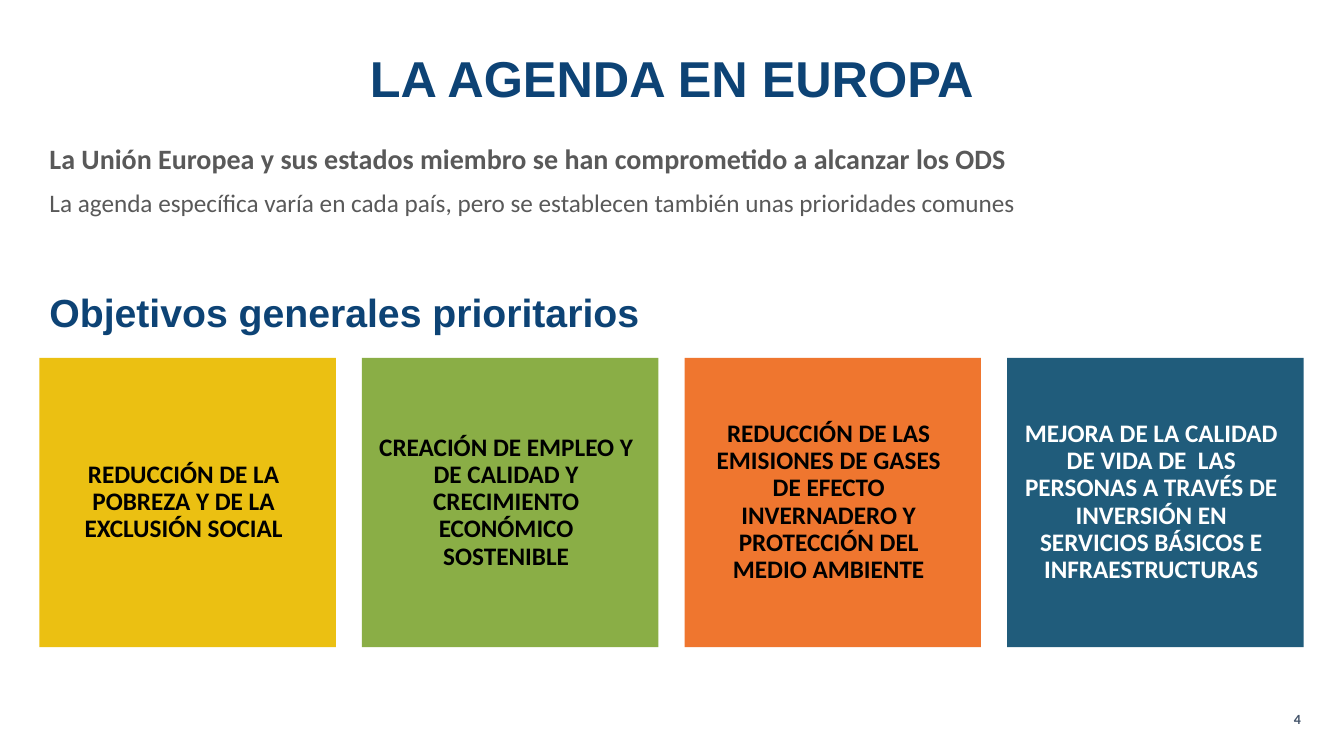
from lxml.etree import SubElement as Sub
from pptx import Presentation
from pptx.dml.color import RGBColor as Rgb
from pptx.enum.shapes import MSO_SHAPE as Kind
from pptx.enum.text import MSO_ANCHOR as Anchor, MSO_AUTO_SIZE as Fit, PP_ALIGN as Align
from pptx.oxml.ns import qn
from pptx.util import Inches, Pt

NAVY, GREY, SLATE = "0D4375", "595959", "44546A"
BLACK, WHITE = "000000", "FFFFFF"
LEFT, STEP, SIDE = 2.93, 24, 22.06
CARDS = [
    ("REDUCCIÓN DE LA POBREZA Y DE LA EXCLUSIÓN SOCIAL", "EBC012", BLACK),
    ("CREACIÓN DE EMPLEO Y DE CALIDAD Y CRECIMIENTO ECONÓMICO SOSTENIBLE", "8AAE46", BLACK),
    ("REDUCCIÓN DE LAS EMISIONES DE GASES DE EFECTO INVERNADERO Y PROTECCIÓN DEL MEDIO AMBIENTE",
     "EF762F", BLACK),
    ("MEJORA DE LA CALIDAD DE VIDA DE  LAS PERSONAS A TRAVÉS DE INVERSIÓN EN SERVICIOS BÁSICOS"
     " E INFRAESTRUCTURAS", "205C7B", WHITE),
]


def paint(code):
    """Turn a hex string into a colour."""
    return Rgb.from_string(code)


def write(frame, text, size=18, face="Calibri", color=GREY, bold=True,
          align=Align.LEFT, anchor=Anchor.TOP, before=10, lines=0.9):
    """Fill a text frame with one formatted paragraph without a bullet."""
    frame.word_wrap, frame.auto_size = True, Fit.NONE
    frame.vertical_anchor = anchor
    para = frame.paragraphs[0]
    para.alignment, para.line_spacing, para.space_before = align, lines, Pt(before)
    props = para._p.get_or_add_pPr()
    props.set("marL", "0")
    props.set("indent", "0")
    Sub(props, qn("a:buNone"))
    run = para.add_run()
    run.text = text
    font = run.font
    font.size, font.name, font.bold = Pt(size), face, bold
    font.color.rgb = paint(color)


class Board:
    """Hold the deck, its current slide and its percent grid."""

    def __init__(self):
        """Open a wide deck with a title and several text places."""
        self.deck = Presentation()
        self.deck.slide_width, self.deck.slide_height = Inches(13.33), Inches(7.5)
        self.slide = self.deck.slides.add_slide(self.deck.slide_layouts[4])

    def area(self, x, y, w, h):
        """Turn percent shares of the slide into lengths."""
        wide, high = self.deck.slide_width, self.deck.slide_height
        return [int(part * full / 100) for part, full in zip((x, y, w, h), (wide, high) * 2)]

    def place(self, key, box, text, **style):
        """Move a template placeholder and fill it."""
        item = self.slide.placeholders[key]
        item.left, item.top, item.width, item.height = self.area(*box)
        write(item.text_frame, text, **style)

    def card(self, box, text, fill, color):
        """Add a filled card with centred text."""
        item = self.slide.shapes.add_shape(Kind.RECTANGLE, *self.area(*box))
        item.shadow.inherit = False
        item.fill.solid()
        item.fill.fore_color.rgb = paint(fill)
        item.line.fill.background()
        frame = item.text_frame
        frame.margin_left = Inches(0.16)
        frame.margin_top = frame.margin_right = frame.margin_bottom = Inches(0.24)
        write(frame, text, color=color, align=Align.CENTER, anchor=Anchor.MIDDLE)

    def label(self, box, text, **style):
        """Add a plain text box."""
        item = self.slide.shapes.add_textbox(*self.area(*box))
        write(item.text_frame, text, **style)

    def prune(self):
        """Remove the placeholders left empty."""
        for item in list(self.slide.placeholders):
            if not item.text_frame.text:
                item.element.getparent().remove(item.element)


def main():
    """Build and save the slide."""
    board = Board()
    span = 100 - LEFT
    board.place(0, (0, 6, 100, 9.6), "LA AGENDA EN EUROPA", size=36, face="Arial",
                color=NAVY, align=Align.CENTER, anchor=Anchor.MIDDLE, before=0)
    board.place(1, (LEFT, 18.53, span, 9.6),
                "La Unión Europea y sus estados miembro se han comprometido a alcanzar los ODS", size=20)
    board.place(2, (LEFT, 24.53, span, 6.53),
                "La agenda específica varía en cada país, pero se establecen también unas"
                " prioridades comunes", bold=False)
    board.place(3, (LEFT, 38.13, span, 6.27), "Objetivos generales prioritarios",
                size=28, face="Arial", color=NAVY)
    for col, (text, fill, color) in enumerate(CARDS):
        board.card((LEFT + col * STEP, 47.33, SIDE, 38.27), text, fill, color)
    board.label((93.85, 93.33, 3.68, 3.6), "4", size=10, color=SLATE,
                align=Align.RIGHT, before=0, lines=1.0)
    board.prune()
    board.deck.save("out.pptx")


if __name__ == "__main__":
    main()
